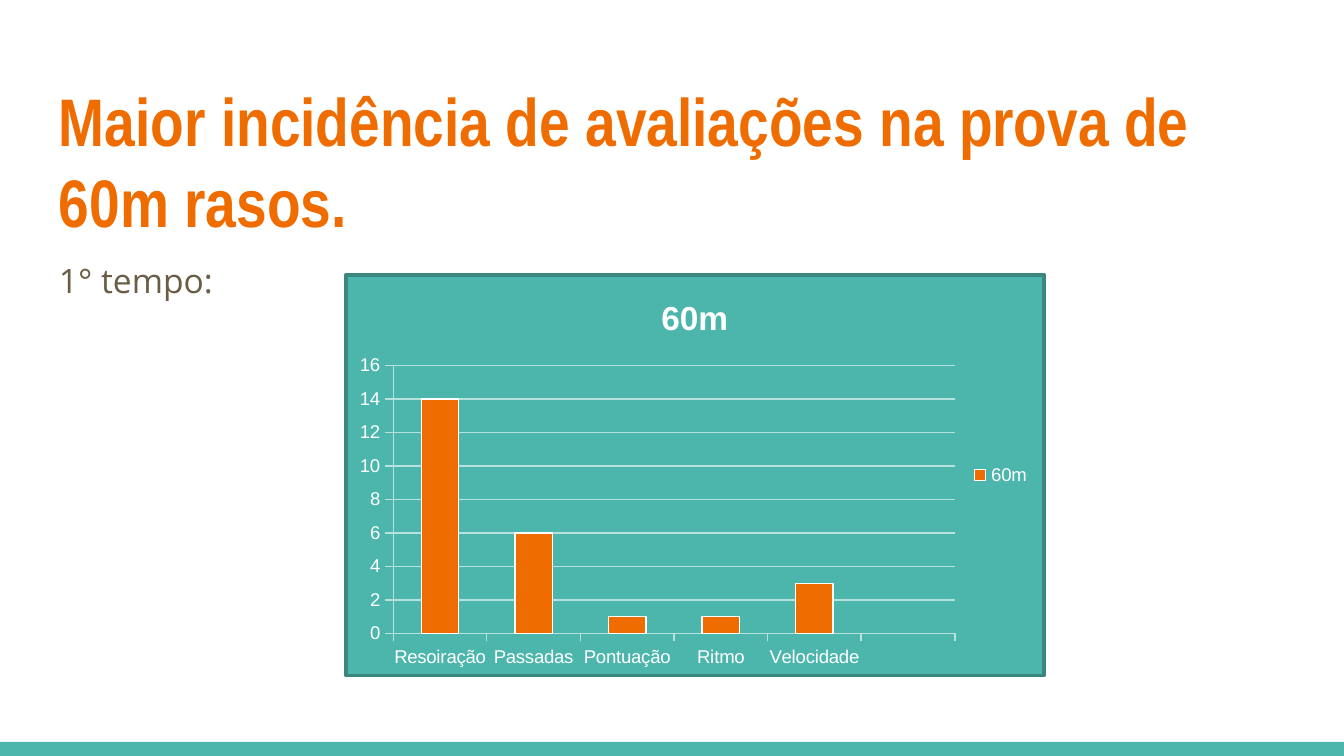
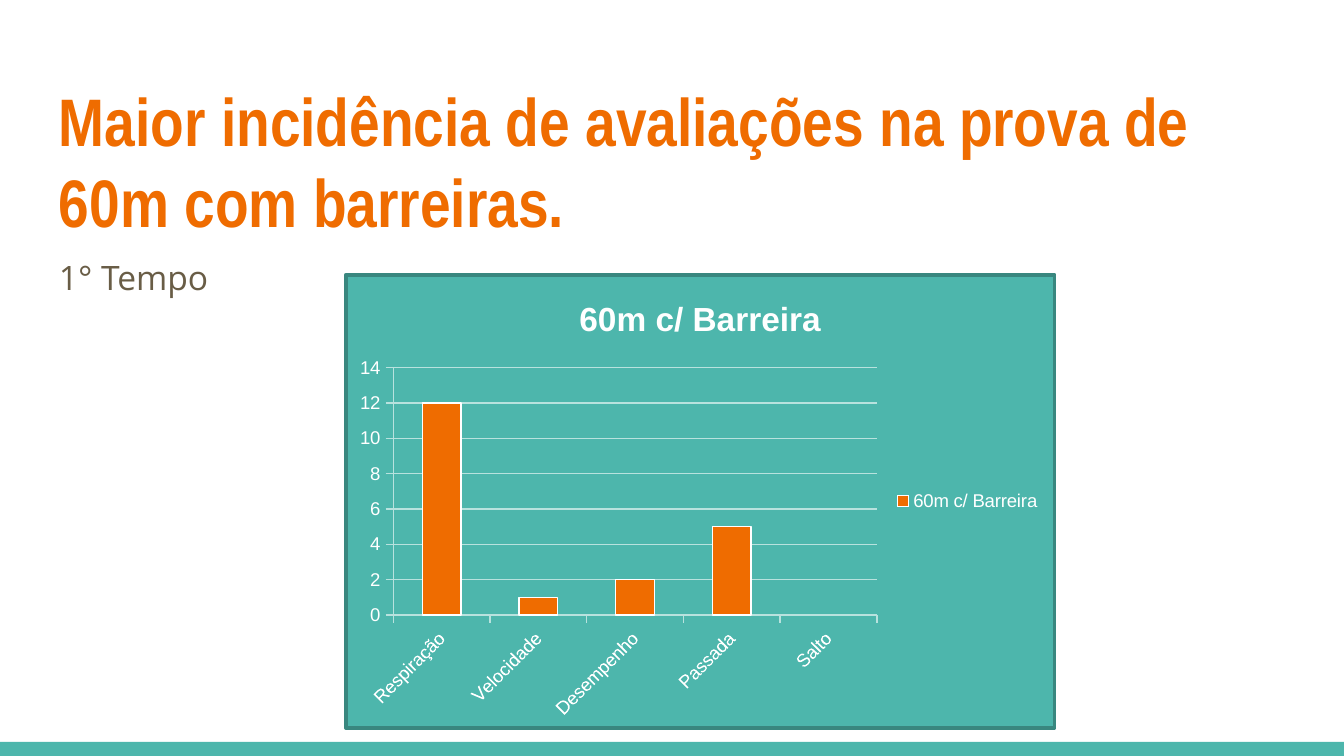
"""Builds two slides with column charts of evaluations in 60m races."""
from pptx import Presentation
from pptx.chart.data import CategoryChartData
from pptx.dml.color import RGBColor
from pptx.enum.chart import XL_CHART_TYPE as ChartType, XL_LEGEND_POSITION as LegendPos
from pptx.enum.chart import XL_TICK_MARK as Tick
from pptx.enum.shapes import MSO_SHAPE as Shape
from pptx.enum.text import MSO_ANCHOR as Anchor
from pptx.oxml import parse_xml
from pptx.oxml.ns import nsdecls
from pptx.util import Inches, Pt

COLORS = {
    "orange": "EF6C00",
    "teal": "4DB6AC",
    "border": "39877F",
    "grid": "B8E2DE",
    "text": "695D46",
    "white": "FFFFFF",
}
MARGIN = 0.34


def rgb(name):
    """Return the named colour."""
    return RGBColor.from_string(COLORS[name])


def style_font(font, name, size, color, bold=False):
    """Set the face, size, colour and weight of a font."""
    font.name, font.size, font.bold = name, Pt(size), bold
    font.color.rgb = rgb(color)


def style_line(line, color, width=0.75):
    """Give a line its colour and width."""
    line.color.rgb = rgb(color)
    line.width = Pt(width)


def add_text(s, text, box, *, font, size, color, bold=False, spacing=1.0, after=0):
    """Add a wrapped text box at box."""
    tf = s.shapes.add_textbox(*map(Inches, box)).text_frame
    tf.word_wrap = True
    tf.vertical_anchor = Anchor.TOP
    tf.margin_left = tf.margin_right = tf.margin_top = tf.margin_bottom = Inches(0.1)
    p = tf.paragraphs[0]
    p.line_spacing, p.space_after = spacing, Pt(after)
    r = p.add_run()
    r.text = text
    style_font(r.font, font, size, color, bold)


def add_base(prs, title):
    """Add a blank slide with the title and the bottom band."""
    s = prs.slides.add_slide(prs.slide_layouts[6])
    band = s.shapes.add_shape(Shape.RECTANGLE, 0, Inches(5.52), prs.slide_width, Inches(0.11))
    band.shadow.inherit = False
    band.fill.solid()
    band.fill.fore_color.rgb = rgb("teal")
    band.line.fill.background()
    add_text(s, title, (MARGIN, 0.49, 9.32, 0.77),
             font="Arial Narrow", size=36, color="orange", bold=True)
    return s


def fill_chart_area(chart):
    """Fill and outline the whole chart area."""
    area = parse_xml(
        f'<c:spPr {nsdecls("c", "a")}>'
        f'<a:solidFill><a:srgbClr val="{COLORS["teal"]}"/></a:solidFill>'
        f'<a:ln w="{Pt(2)}"><a:solidFill><a:srgbClr val="{COLORS["border"]}"/></a:solidFill>'
        '</a:ln></c:spPr>')
    chart.element.find("{*}chart").addnext(area)


def add_column_chart(s, name, size, values):
    """Add a one-series column chart from (category, value) pairs."""
    data = CategoryChartData()
    data.categories = [category for category, _ in values]
    data.add_series(name, [value for _, value in values])
    chart = s.shapes.add_chart(ChartType.COLUMN_CLUSTERED, Inches(2.56), Inches(2.03),
                               *map(Inches, size), data).chart
    style_font(chart.font, "Arial", 10, "white")
    fill_chart_area(chart)

    chart.has_title = True
    p = chart.chart_title.text_frame.paragraphs[0]
    r = p.add_run()
    r.text = name
    style_font(r.font, "Arial", 18, "white", bold=True)
    chart.chart_title.include_in_layout = False

    chart.has_legend = True
    chart.legend.position = LegendPos.RIGHT
    chart.legend.include_in_layout = False

    for axis in (chart.category_axis, chart.value_axis):
        axis.major_tick_mark = Tick.OUTSIDE
        style_line(axis.format.line, "grid")
    style_line(chart.value_axis.major_gridlines.format.line, "grid")

    plot = chart.plots[0]
    plot.gap_width = 150
    plot.vary_by_categories = False
    columns = plot.series[0].format
    columns.fill.solid()
    columns.fill.fore_color.rgb = rgb("orange")
    style_line(columns.line, "white")


def add_race_slide(prs, race, label, label_box, name, size, values):
    """Add the slide of one race: title, label and chart."""
    s = add_base(prs, f"Maior incidência de avaliações na prova de {race}.")
    add_text(s, label, label_box, font="Open Sans", size=18, color="text",
             spacing=1.15, after=16)
    add_column_chart(s, name, size, values)


def main():
    """Build and save the presentation."""
    prs = Presentation()
    prs.slide_width = Inches(10)
    prs.slide_height = prs.slide_width * 9 // 16
    add_race_slide(
        prs, "60m rasos", "1° tempo:", (MARGIN, 1.79, 2.93, 3.14), "60m", (5.22, 3.01),
        [("Resoiração", 14), ("Passadas", 6), ("Pontuação", 1),
         ("Ritmo", 1), ("Velocidade", 3), ("", None)])
    add_race_slide(
        prs, "60m com barreiras", "1° Tempo", (MARGIN, 1.77, 2.63, 2.83),
        "60m c/ Barreira", (5.3, 3.4),
        [("Respiração", 12), ("Velocidade", 1), ("Desempenho", 2),
         ("Passada", 5), ("Salto", None)])
    prs.save("out.pptx")


if __name__ == "__main__":
    main()
